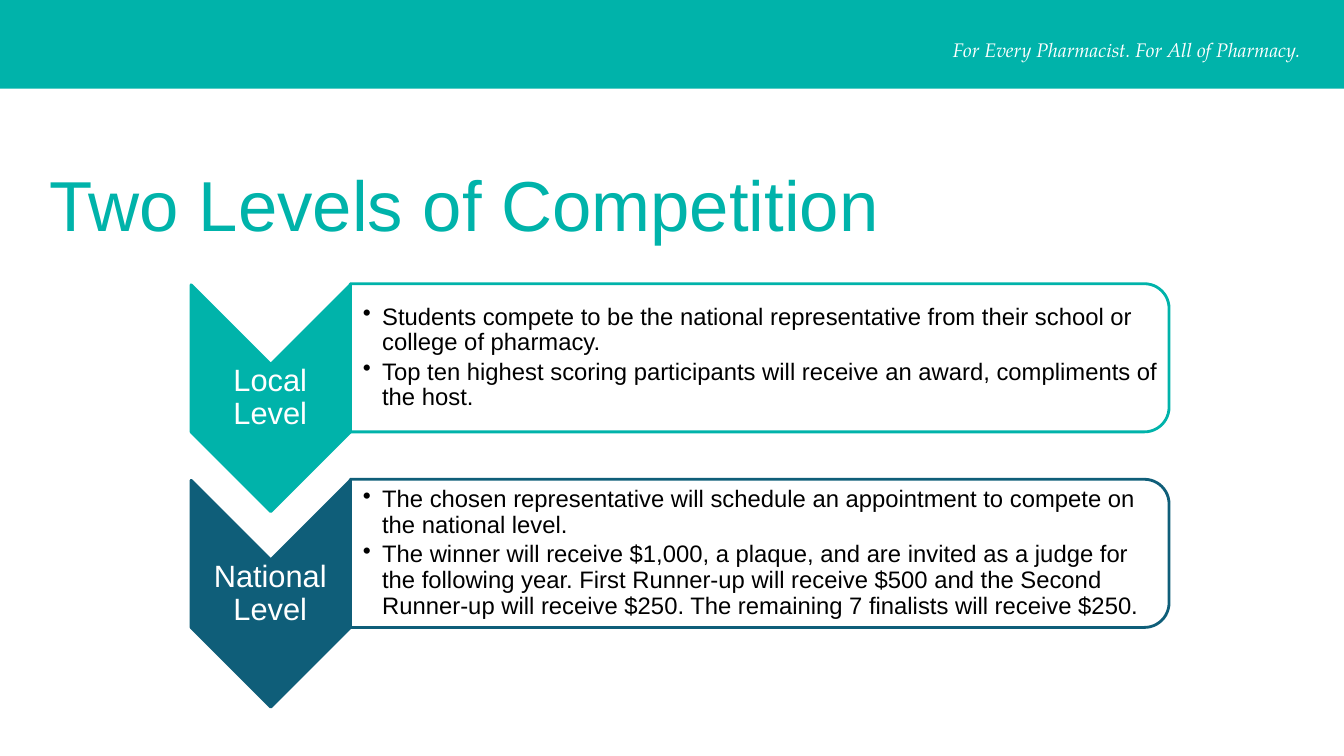
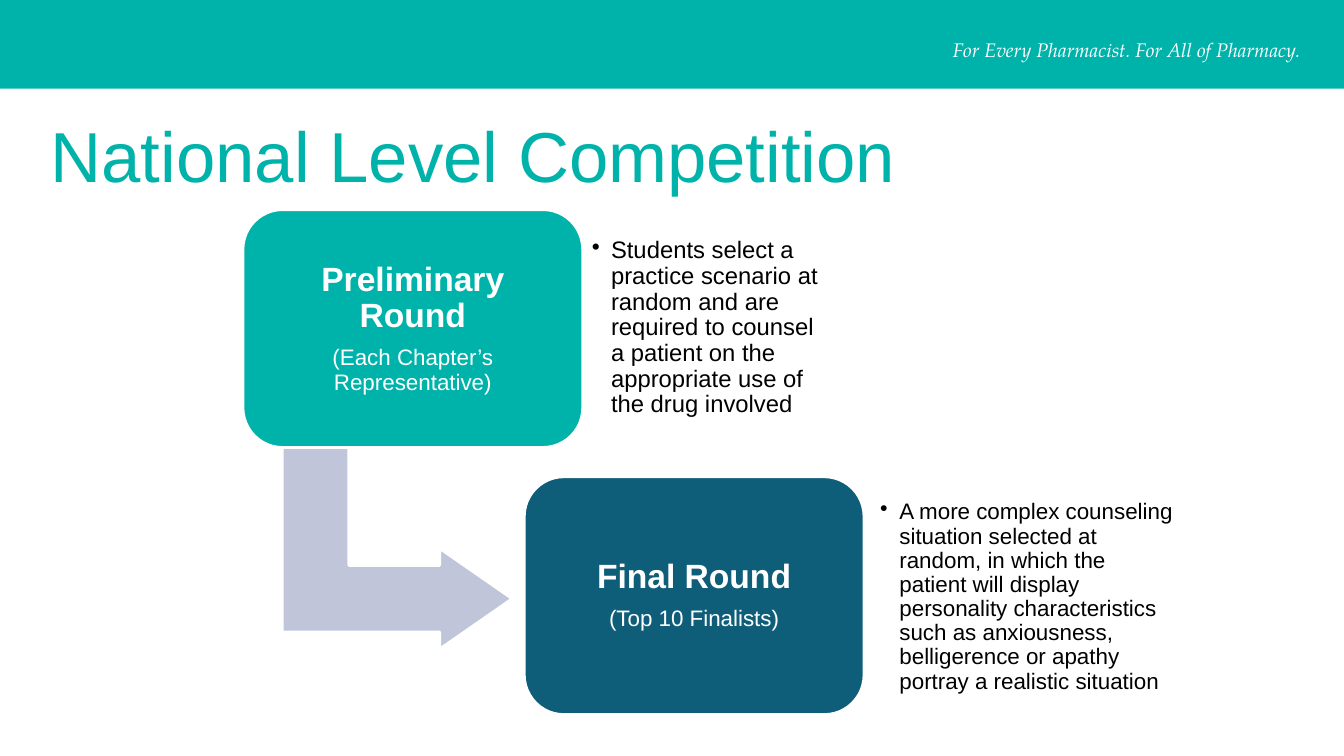
import dataclasses

import lxml.etree
import pptx
import pptx.dml.color
import pptx.enum.shapes
import pptx.enum.text
import pptx.oxml.ns
import pptx.util

PX = pptx.util.Inches(1) // 100
SHAPE = pptx.enum.shapes.MSO_SHAPE
ALIGN = pptx.enum.text.PP_ALIGN
ANCHOR = pptx.enum.text.MSO_ANCHOR


@dataclasses.dataclass(frozen=True)
class Theme:
    teal: str = "00B3AA"
    navy: str = "0F5E79"
    lilac: str = "C1C5DA"
    white: str = "FFFFFF"
    black: str = "000000"
    font: str = "Arial"
    tagline_font: str = "TeX Gyre Pagella"
    title_size: float = 50.5
    round_size: int = 24
    level_size: int = 22
    body_size: int = 17
    small_size: int = 16
    tagline_size: int = 14
    line_width: int = 2


theme = Theme()


def add_box(page, kind, frame, fill=None, line=None):
    """Add a preset shape, or a text box when kind is None; frame is in px."""
    lengths = [value * PX for value in frame]
    if kind is None:
        return page.shapes.add_textbox(*lengths)
    box = page.shapes.add_shape(kind, *lengths)
    box.shadow.inherit = False
    box.fill.solid()
    box.fill.fore_color.rgb = pptx.dml.color.RGBColor.from_string(fill)
    if line:
        box.line.color.rgb = pptx.dml.color.RGBColor.from_string(line)
        box.line.width = pptx.util.Pt(theme.line_width)
    else:
        box.line.fill.background()
    return box


def write(box, items, color, margins=(0, 0, 0, 0), align=ALIGN.LEFT, anchor=ANCHOR.MIDDLE,
          font=theme.font, spacing=None, after=0, bullet=False, italic=False):
    """Fill a box with (text, size, bold) items; after is a share of the type size."""
    frame = box.text_frame
    frame.word_wrap = True
    frame.vertical_anchor = anchor
    (frame.margin_left, frame.margin_top,
     frame.margin_right, frame.margin_bottom) = [value * PX for value in margins]
    for index, (text, size, bold) in enumerate(items):
        para = frame.add_paragraph() if index else frame.paragraphs[0]
        para.text = text
        if bullet:
            properties = para._p.get_or_add_pPr()
            properties.set("marL", str(19 * PX))
            properties.set("indent", str(-19 * PX))
            mark = lxml.etree.SubElement(properties, pptx.oxml.ns.qn("a:buChar"))
            mark.set("char", "•")
        para.alignment = align
        if spacing:
            para.line_spacing = spacing
        if after:
            para.space_after = pptx.util.Pt(round(after * size, 1))
        para.font.name = font
        para.font.size = pptx.util.Pt(size)
        para.font.bold = bold
        para.font.italic = italic
        para.font.color.rgb = pptx.dml.color.RGBColor.from_string(color)


deck = pptx.Presentation()
deck.slide_width, deck.slide_height = 1333 * PX, 750 * PX

# Band, tagline and title on every page
pages = []
for title, left, top in [("Two Levels of Competition", 49, 159),
                         ("National Level Competition", 50, 110)]:
    page = deck.slides.add_slide(deck.slide_layouts[6])
    add_box(page, SHAPE.RECTANGLE, (0, 0, 1333, 88), theme.teal)
    tagline = add_box(page, None, (842, 33, 458, 34))
    write(tagline, [("For Every Pharmacist. For All of Pharmacy.", theme.tagline_size, False)],
          theme.white, (10, 5, 10, 5), ALIGN.RIGHT, ANCHOR.TOP, theme.tagline_font, italic=True)
    heading = add_box(page, None, (left, top, 1236, 85))
    write(heading, [(title, theme.title_size, False)], theme.teal, anchor=ANCHOR.BOTTOM)
    pages.append(page)
levels_page, rounds_page = pages

# Levels: a downward chevron with a panel of bullets
levels = [
    ("Local Level", theme.teal, [
        "Students compete to be the national representative from their school or "
        "college of pharmacy.",
        "Top ten highest scoring participants will receive an award, compliments of "
        "the host."]),
    ("National Level", theme.navy, [
        "The chosen representative will schedule an appointment to compete on "
        "the national level.",
        "The winner will receive $1,000, a plaque, and are invited as a judge for "
        "the following year. First Runner-up will receive $500 and the Second "
        "Runner-up will receive $250. The remaining 7 finalists will receive $250."]),
]
LEVEL_STEP = 194
for row, (name, color, points) in enumerate(levels):
    shift = row * LEVEL_STEP
    chevron = add_box(levels_page, SHAPE.CHEVRON, (156, 316 + shift, 225, 158), color, color)
    chevron.rotation = 90
    label = add_box(levels_page, None, (189, 361 + shift, 158, 68))
    write(label, [(name, theme.level_size, False)], theme.white, (2, 2, 2, 2), ALIGN.CENTER,
          spacing=0.9, after=0.35)
    panel = add_box(levels_page, SHAPE.ROUND_2_SAME_RECTANGLE, (680, -51 + shift, 147, 812),
                    theme.white, color)
    panel.rotation = 90
    details = add_box(levels_page, None, (347, 289 + shift, 805, 132))
    write(details, [(point, theme.body_size, False) for point in points], theme.black,
          (13, 1, 1, 1), spacing=0.9, after=0.15, bullet=True)

# Rounds: two cards stepping down, joined by a bent arrow
arrow = add_box(rounds_page, SHAPE.BENT_UP_ARROW, (294, 430, 200, 228), theme.lilac, theme.white)
arrow.rotation = 90
for index, share in enumerate((0.33, 0.25, 0.36)):
    arrow.adjustments[index] = share

rounds = [
    ("Preliminary Round", "(Each Chapter’s Representative)", theme.teal,
     (578, 230, 245, 191), theme.body_size,
     "Students select a practice scenario at random and are required to counsel "
     "a patient on the appropriate use of the drug involved"),
    ("Final Round", "(Top 10 Finalists)", theme.navy,
     (864, 483, 311, 219), theme.small_size,
     "A more complex counseling situation selected at random, in which the "
     "patient will display personality characteristics such as anxiousness, "
     "belligerence or apathy portray a realistic situation"),
]
for step, (name, entrants, color, details_frame, size, task) in enumerate(rounds):
    card = add_box(rounds_page, SHAPE.ROUNDED_RECTANGLE,
                   (241 + step * 279, 208 + step * 265, 337, 236), color, theme.white)
    write(card, [(name, theme.round_size, True), (entrants, theme.small_size, False)],
          theme.white, (10, 10, 10, 10), ALIGN.CENTER, spacing=0.9, after=0.35)
    details = add_box(rounds_page, None, details_frame)
    write(details, [(task, size, False)], theme.black, (9, 9, 9, 9),
          spacing=0.9, after=0.15, bullet=True)

deck.save("out.pptx")
